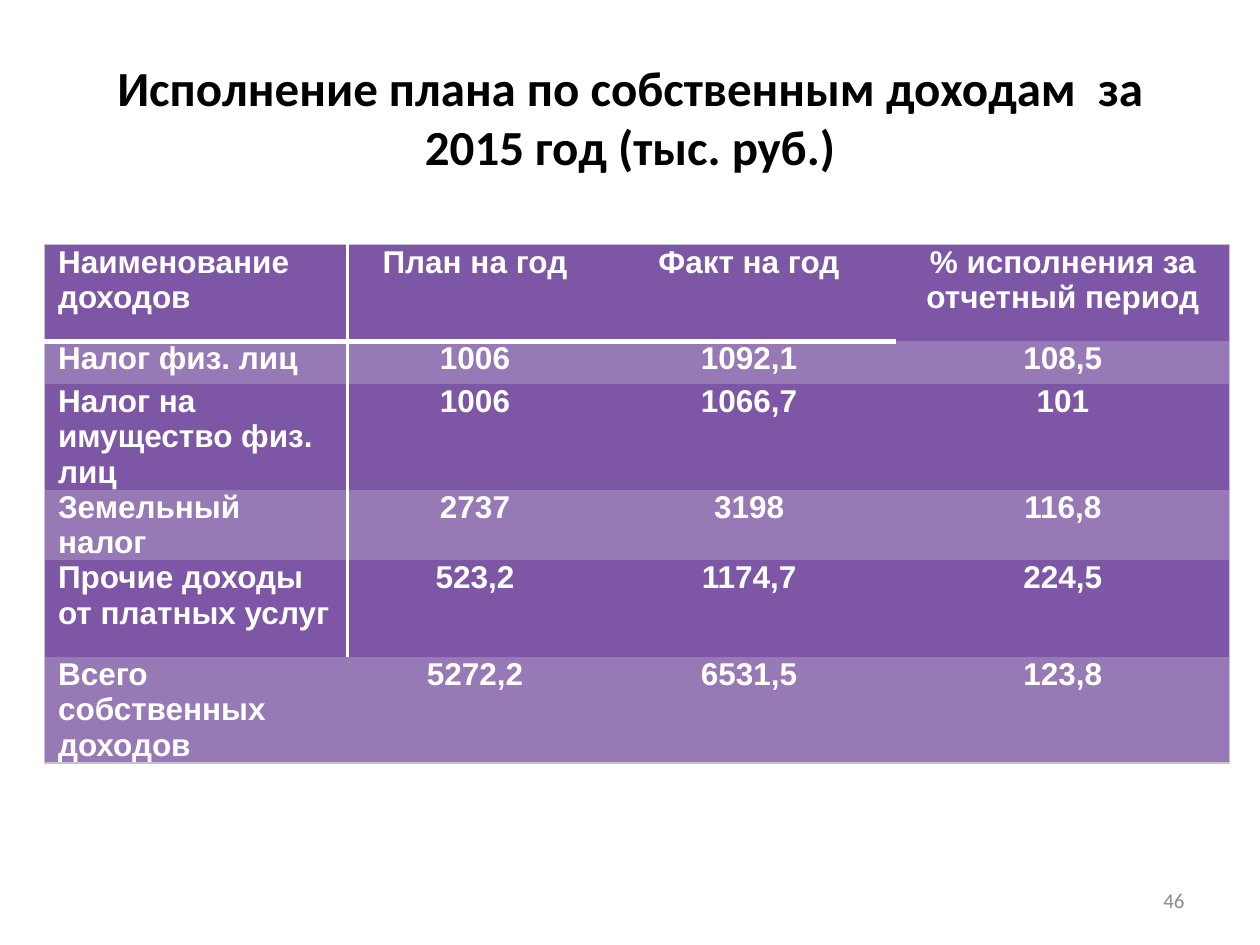
import pptx
import pptx.dml.color
import pptx.enum.text
import pptx.oxml
import pptx.oxml.ns
import pptx.util
from dataclasses import dataclass
from pptx.util import Cm

ALIGN = pptx.enum.text.PP_ALIGN
ANCHOR = pptx.enum.text.MSO_ANCHOR


@dataclass(frozen=True)
class Theme:
    purple: str = "7D57A5"
    light_purple: str = "9779B5"
    white: str = "FFFFFF"
    black: str = "000000"
    grey: str = "8C8C8C"
    frame: str = "C8C1D3"
    heading_font: str = "Calibri"
    table_font: str = "Arial"
    title_size: int = 28
    table_size: int = 18
    number_size: int = 12


THEME = Theme()
NO_TABLE_STYLE = "{2D5ABB26-0587-4C30-8999-92F81FD0307C}"

TITLE = "Исполнение плана по собственным доходам  за 2015 год (тыс. руб.)"
ROWS = [
    ("Наименование доходов", "План на год", "Факт на год",
     "% исполнения за отчетный период"),
    ("Налог физ. лиц", "1006", "1092,1", "108,5"),
    ("Налог на имущество физ. лиц", "1006", "1066,7", "101"),
    ("Земельный налог", "2737", "3198", "116,8"),
    ("Прочие доходы от платных услуг", "523,2", "1174,7", "224,5"),
    ("Всего собственных доходов", "5272,2", "6531,5", "123,8"),
]
COLUMN_WIDTHS = [6.12, 5.13, 5.92, 6.73]
ROW_HEIGHTS = [1.95, 0.86, 1.63, 1.09, 1.95, 1.95]


def rgb(color):
    return pptx.dml.color.RGBColor.from_string(color)


def write(tf, text, font, size, color, align, bold=False):
    tf.text = text
    p = tf.paragraphs[0]
    p.alignment = align
    p.font.name = font
    p.font.size = pptx.util.Pt(size)
    p.font.bold = bold
    p.font.color.rgb = rgb(color)


def add_title(s):
    sp = s.shapes.title
    sp.left, sp.top, sp.width, sp.height = Cm(1.27), Cm(0.76), Cm(22.86), Cm(3.18)
    sp.text_frame.vertical_anchor = ANCHOR.MIDDLE
    write(sp.text_frame, TITLE, THEME.heading_font, THEME.title_size,
          THEME.black, ALIGN.CENTER, bold=True)


def set_borders(cell, borders):
    """Draw the given sides; they must come as L, R, T, B, before the fill."""
    tcPr = cell._tc.get_or_add_tcPr()
    for i, (side, (color, width)) in enumerate(borders.items()):
        tcPr.insert(i, pptx.oxml.parse_xml(
            f'<a:ln{side} {pptx.oxml.ns.nsdecls("a")} w="{pptx.util.Pt(width)}">'
            f'<a:solidFill><a:srgbClr val="{color}"/></a:solidFill></a:ln{side}>'))


def cell_borders(row, col):
    last_row, last_col = len(ROWS) - 1, len(COLUMN_WIDTHS) - 1
    frame = (THEME.frame, 0.75)
    borders = {}
    if col == 0:
        borders["L"] = frame
    if col == last_col:
        borders["R"] = frame
    elif col == 0 and row < last_row:
        borders["R"] = (THEME.white, 2)
    if row == 0:
        borders["T"] = frame
        if col < last_col:
            borders["B"] = (THEME.white, 3)
    elif row == last_row:
        borders["B"] = frame
    return borders


def add_income_table(s):
    sp = s.shapes.add_table(len(ROWS), len(COLUMN_WIDTHS), Cm(0.89), Cm(4.93),
                            Cm(sum(COLUMN_WIDTHS)), Cm(sum(ROW_HEIGHTS)))
    table = sp.table
    table.first_row = table.horz_banding = False
    table._tbl.tblPr.find(pptx.oxml.ns.qn("a:tableStyleId")).text = NO_TABLE_STYLE
    for column, width in zip(table.columns, COLUMN_WIDTHS):
        column.width = Cm(width)
    for i, (row, height) in enumerate(zip(table.rows, ROW_HEIGHTS)):
        row.height = Cm(height)
        for j, cell in enumerate(row.cells):
            cell.margin_left = cell.margin_right = Cm(0.28)
            cell.margin_top = cell.margin_bottom = 0
            cell.fill.solid()
            cell.fill.fore_color.rgb = rgb(THEME.light_purple if i % 2 else THEME.purple)
            set_borders(cell, cell_borders(i, j))
            write(cell.text_frame, ROWS[i][j], THEME.table_font, THEME.table_size,
                  THEME.white, ALIGN.CENTER if j else ALIGN.LEFT, bold=True)


def add_page_number(s, number):
    sp = s.shapes.add_textbox(Cm(18.2), Cm(17.65), Cm(5.93), Cm(1.01))
    tf = sp.text_frame
    tf.word_wrap = True
    tf.vertical_anchor = ANCHOR.MIDDLE
    write(tf, str(number), THEME.heading_font, THEME.number_size,
          THEME.grey, ALIGN.RIGHT)


def main():
    prs = pptx.Presentation()
    prs.slide_width, prs.slide_height = Cm(25.4), Cm(19.05)
    s = prs.slides.add_slide(prs.slide_layouts[5])
    add_title(s)
    add_income_table(s)
    add_page_number(s, 46)
    prs.save("out.pptx")


if __name__ == "__main__":
    main()
